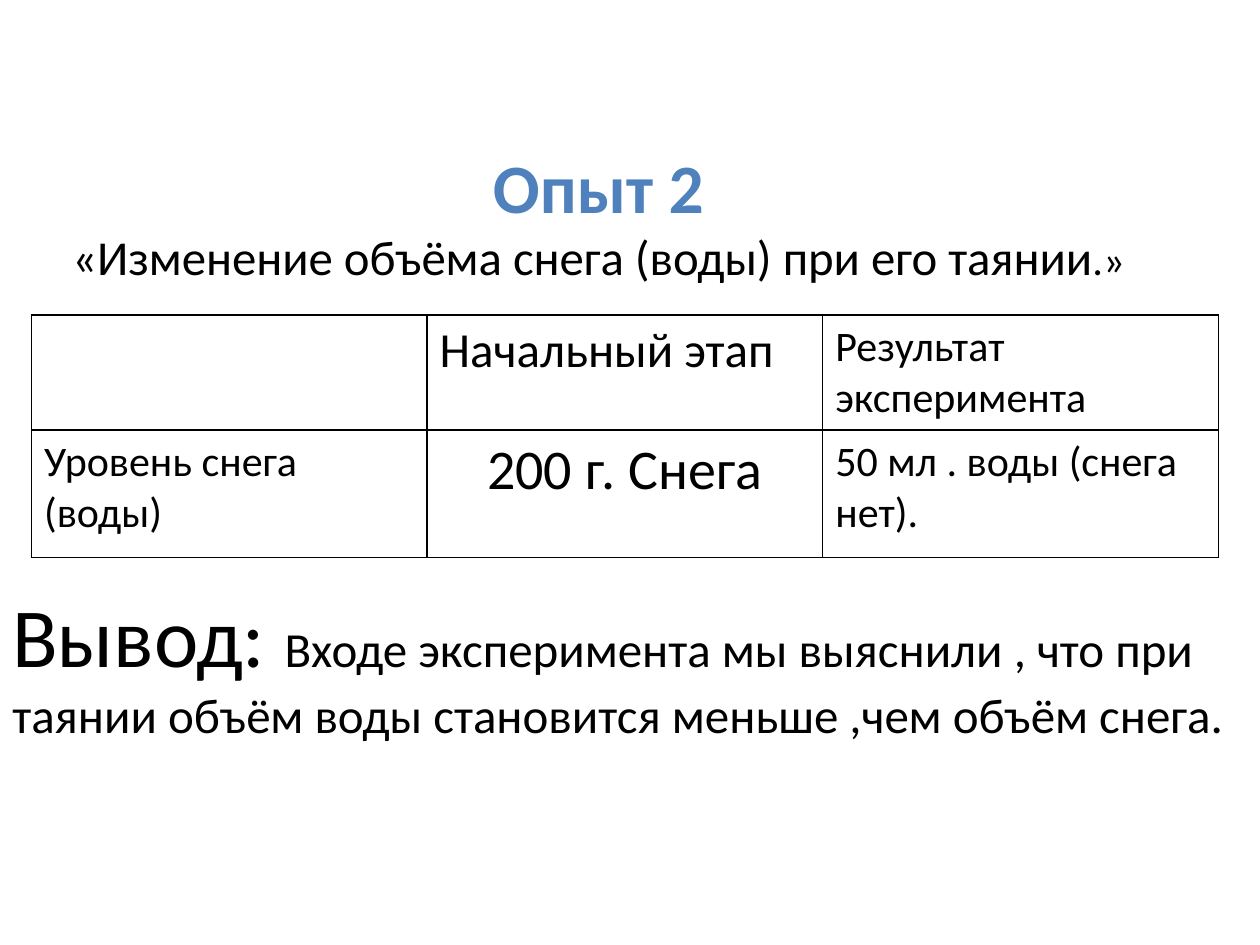
"""Build the slide about the change of snow volume on melting."""
import copy
import dataclasses
import typing

import lxml.etree
import pptx
import pptx.dml.color
import pptx.enum.text
import pptx.oxml.ns
import pptx.util

EMU_PER_PX = 9144
FONT = "Calibri"
BLACK = pptx.dml.color.RGBColor(0x00, 0x00, 0x00)
BLUE = pptx.dml.color.RGBColor(0x4F, 0x81, 0xBD)
ALIGN = pptx.enum.text.PP_ALIGN
BORDER_SIDES = ("lnL", "lnR", "lnT", "lnB")


@dataclasses.dataclass(frozen=True)
class TextRun:
    text: str
    size: float
    color: pptx.dml.color.RGBColor = BLACK
    bold: bool = False


@dataclasses.dataclass(frozen=True)
class TableEntry:
    row: int
    column: int
    run: TextRun
    alignment: typing.Any = ALIGN.LEFT


TITLE = TextRun("Опыт 2", 39.6, BLUE, True)
SUBTITLE = (
    TextRun("«Изменение объёма снега (воды) при его таянии", 27.9),
    TextRun(".»", 24.3),
)
ENTRIES = (
    TableEntry(0, 1, TextRun("Начальный этап", 28)),
    TableEntry(0, 2, TextRun("Результат эксперимента", 24)),
    TableEntry(1, 0, TextRun("Уровень снега (воды)", 24)),
    TableEntry(1, 1, TextRun("200 г. Снега", 32), ALIGN.CENTER),
    TableEntry(1, 2, TextRun("50 мл . воды (снега нет).", 24)),
)
CONCLUSION = (
    TextRun("Вывод: ", 48),
    TextRun("Входе эксперимента мы выяснили , что при таянии объём воды "
            "становится меньше ,чем объём снега.", 28),
)


def px(value: int) -> int:
    """Turn pixels into EMU."""
    return value * EMU_PER_PX


def add_run(paragraph: typing.Any, content: TextRun) -> typing.Any:
    """Add one formatted run to a paragraph."""
    run = paragraph.add_run()
    run.text = content.text
    run.font.name = FONT
    run.font.size = pptx.util.Pt(content.size)
    run.font.bold = content.bold
    run.font.color.rgb = content.color
    return run


def add_title(slide: typing.Any) -> None:
    """Fill the title placeholder with heading and subject."""
    title = slide.shapes.title
    title.left, title.top, title.width, title.height = map(px, (25, 108, 900, 125))
    frame = title.text_frame
    frame.word_wrap = True
    frame.auto_size = pptx.enum.text.MSO_AUTO_SIZE.NONE
    frame.vertical_anchor = pptx.enum.text.MSO_ANCHOR.MIDDLE
    paragraph = frame.paragraphs[0]
    paragraph.alignment = ALIGN.CENTER
    heading = add_run(paragraph, TITLE)
    paragraph.add_line_break()
    paragraph._p[-1].append(copy.deepcopy(heading._r.rPr))
    for content in SUBTITLE:
        add_run(paragraph, content)


def style_cell(cell: typing.Any) -> None:
    """Clear the fill of a cell and draw its black borders."""
    cell.fill.background()
    properties = cell._tc.get_or_add_tcPr()
    for index, side in enumerate(BORDER_SIDES):
        line = lxml.etree.Element(pptx.oxml.ns.qn(f"a:{side}"), w=str(pptx.util.Pt(1)))
        fill = lxml.etree.SubElement(line, pptx.oxml.ns.qn("a:solidFill"))
        lxml.etree.SubElement(fill, pptx.oxml.ns.qn("a:srgbClr"), val=str(BLACK))
        properties.insert(index, line)


def add_results(slide: typing.Any) -> None:
    """Add the table of results."""
    table = slide.shapes.add_table(2, 3, px(25), px(250), px(942), px(191)).table
    table.first_row = False
    table.horz_banding = False
    for row, height in zip(table.rows, (83, 101)):
        row.height = px(height)
    for cell in table.iter_cells():
        style_cell(cell)
    for entry in ENTRIES:
        paragraph = table.cell(entry.row, entry.column).text_frame.paragraphs[0]
        paragraph.alignment = entry.alignment
        add_run(paragraph, entry.run)


def add_conclusion(slide: typing.Any) -> None:
    """Add the conclusion under the table."""
    box = slide.shapes.add_textbox(px(0), px(458), px(1000), px(138))
    frame = box.text_frame
    frame.word_wrap = True
    frame.auto_size = pptx.enum.text.MSO_AUTO_SIZE.SHAPE_TO_FIT_TEXT
    for content in CONCLUSION:
        add_run(frame.paragraphs[0], content)


def main() -> None:
    """Build and save the presentation."""
    presentation = pptx.Presentation()
    presentation.slide_width = px(1000)
    presentation.slide_height = px(750)
    slide = presentation.slides.add_slide(presentation.slide_layouts[5])
    add_results(slide)
    add_title(slide)
    add_conclusion(slide)
    presentation.save("out.pptx")


if __name__ == "__main__":
    main()
